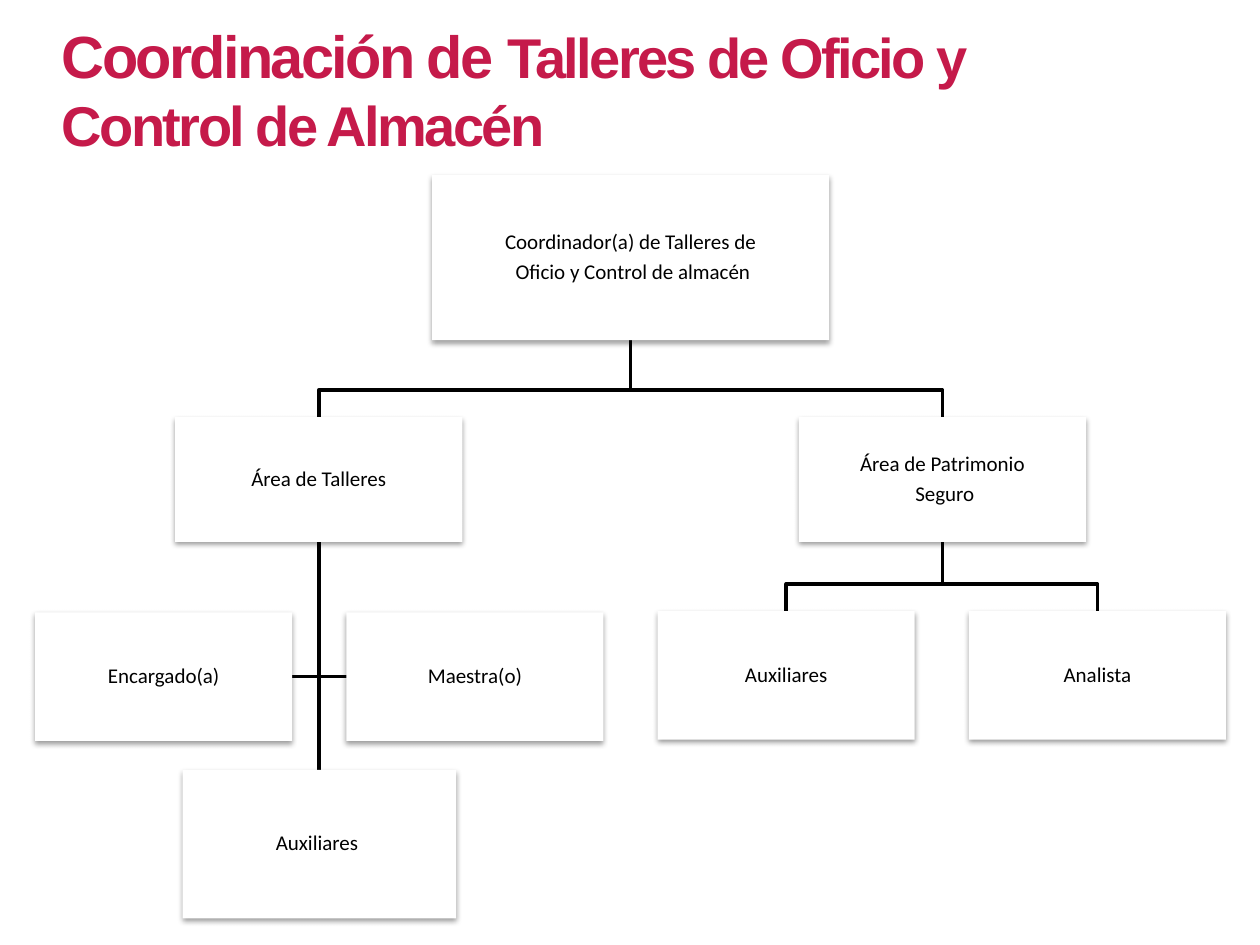
from pptx import Presentation
from pptx.dml.color import RGBColor
from pptx.enum.shapes import MSO_CONNECTOR, MSO_SHAPE
from pptx.enum.text import MSO_ANCHOR, MSO_AUTO_SIZE, PP_ALIGN
from pptx.oxml import parse_xml
from pptx.oxml.ns import nsdecls
from pptx.util import Inches, Pt

RED = RGBColor(0xC5, 0x1A, 0x4A)
BLACK = RGBColor(0, 0, 0)
WHITE = RGBColor(255, 255, 255)
COLS, ROWS = 100, 75
DROP = 2.15

HEAD = dict(name="Arial", bold=True)
BODY = dict(name="Calibri", size=Pt(12))
FRAME = dict(word_wrap=True, vertical_anchor=MSO_ANCHOR.MIDDLE,
             **{f"margin_{side}": Inches(0.01)
                for side in ("left", "top", "right", "bottom")})
PARA = dict(alignment=PP_ALIGN.CENTER, line_spacing=0.9, space_after=Pt(4.2))
SHADE = (f'<a:effectLst {nsdecls("a")}><a:outerShdw blurRad="40000" dist="20000" '
         'dir="5400000" rotWithShape="0"><a:srgbClr val="000000">'
         '<a:alpha val="38000"/></a:srgbClr></a:outerShdw></a:effectLst>')

BOXES = {
    "lead": (34.3, 13.9, 31.5, 13.1,
             ["Coordinador(a) de Talleres de", " Oficio y Control de almacén"]),
    "shops": (13.9, 33.1, 22.8, 9.9, ["Área de Talleres"]),
    "aides": (14.5, 61.1, 21.7, 11.8, ["Auxiliares "]),
    "chief": (2.8, 48.6, 20.4, 10.2, ["Encargado(a)"]),
    "teacher": (27.5, 48.6, 20.4, 10.2, ["Maestra(o)"]),
    "assets": (63.4, 33.1, 22.8, 9.9, ["Área de Patrimonio", " Seguro"]),
    "helpers": (52.2, 48.5, 20.4, 10.2, ["Auxiliares"]),
    "analyst": (76.9, 48.5, 20.4, 10.2, ["Analista"]),
}
TREE = [("assets", "analyst"), ("assets", "helpers"),
        ("lead", "assets"), ("lead", "shops")]


def apply(item, values):
    """Set each named attribute on the item."""
    for key, value in values.items():
        setattr(item, key, value)


class Chart:
    """Draws an organisation chart on a grid of columns and rows."""

    def __init__(self, deck):
        self.cell = deck.slide_width / COLS
        self.slide = deck.slides.add_slide(deck.slide_layouts[5])
        self.shapes = self.slide.shapes

    def grid(self, *units):
        return [round(unit * self.cell) for unit in units]

    def title(self, area, runs):
        shape = self.shapes.title
        apply(shape, dict(zip(("left", "top", "width", "height"), self.grid(*area))))
        apply(shape.text_frame, dict(word_wrap=True, auto_size=MSO_AUTO_SIZE.NONE,
                                     vertical_anchor=MSO_ANCHOR.TOP))
        para = shape.text_frame.paragraphs[0]
        para.alignment = PP_ALIGN.LEFT
        for text, size in runs:
            run = para.add_run()
            run.text = text
            apply(run.font, dict(HEAD, size=Pt(size)))
            run.font.color.rgb = RED
            run.font._element.set("spc", "-150")

    def box(self, left, top, width, height, lines):
        shape = self.shapes.add_shape(MSO_SHAPE.RECTANGLE,
                                      *self.grid(left, top, width, height))
        shape.fill.solid()
        shape.fill.fore_color.rgb = WHITE
        shape.line.fill.background()
        shape._element.spPr.append(parse_xml(SHADE))
        frame = shape.text_frame
        apply(frame, FRAME)
        frame.text = "\n".join(lines)
        for para in frame.paragraphs:
            apply(para, PARA)
            apply(para.font, BODY)
            para.font.color.rgb = BLACK

    def stroke(self, shape):
        shape.line.color.rgb = BLACK
        shape.line.width = Pt(2)

    def bend(self, *points):
        start, *rest = [self.grid(*point) for point in points]
        pen = self.shapes.build_freeform(*start)
        pen.add_line_segments(rest, close=False)
        shape = pen.convert_to_shape()
        shape.fill.background()
        shape.shadow.inherit = False
        self.stroke(shape)

    def line(self, start, end):
        shape = self.shapes.add_connector(MSO_CONNECTOR.STRAIGHT,
                                          *self.grid(*start, *end))
        shape._element.spPr.append(parse_xml(f'<a:effectLst {nsdecls("a")}/>'))
        self.stroke(shape)

    def branch(self, parent, child):
        x, y = foot(parent)
        mid, top = foot(child)[0], BOXES[child][1]
        self.bend((x, y), (x, top - DROP), (mid, top - DROP), (mid, top))

    def side(self, parent, child, edge):
        x, y = foot(parent)
        left, top, width, height, _ = BOXES[child]
        mid = top + height / 2
        self.bend((x, y), (x, mid), (left + width * edge, mid))


def foot(name):
    """Return the bottom centre of a box."""
    left, top, width, height, _ = BOXES[name]
    return left + width / 2, top + height


def main():
    """Build and save the slide."""
    deck = Presentation()
    deck.slide_width, deck.slide_height = Inches(10), Inches(7.5)
    chart = Chart(deck)
    chart.title((3.9, 1, 77.6, 12.1),
                [("Coordinación de ", 34),
                 ("Talleres de Oficio y Control de Almacén", 32)])
    for parent, child in TREE:
        chart.branch(parent, child)
    chart.side("shops", "teacher", 0)
    chart.side("shops", "chief", 1)
    x, y = foot("shops")
    chart.line((x, y), (x, BOXES["aides"][1]))
    for box in BOXES.values():
        chart.box(*box)
    deck.save("out.pptx")


if __name__ == "__main__":
    main()
